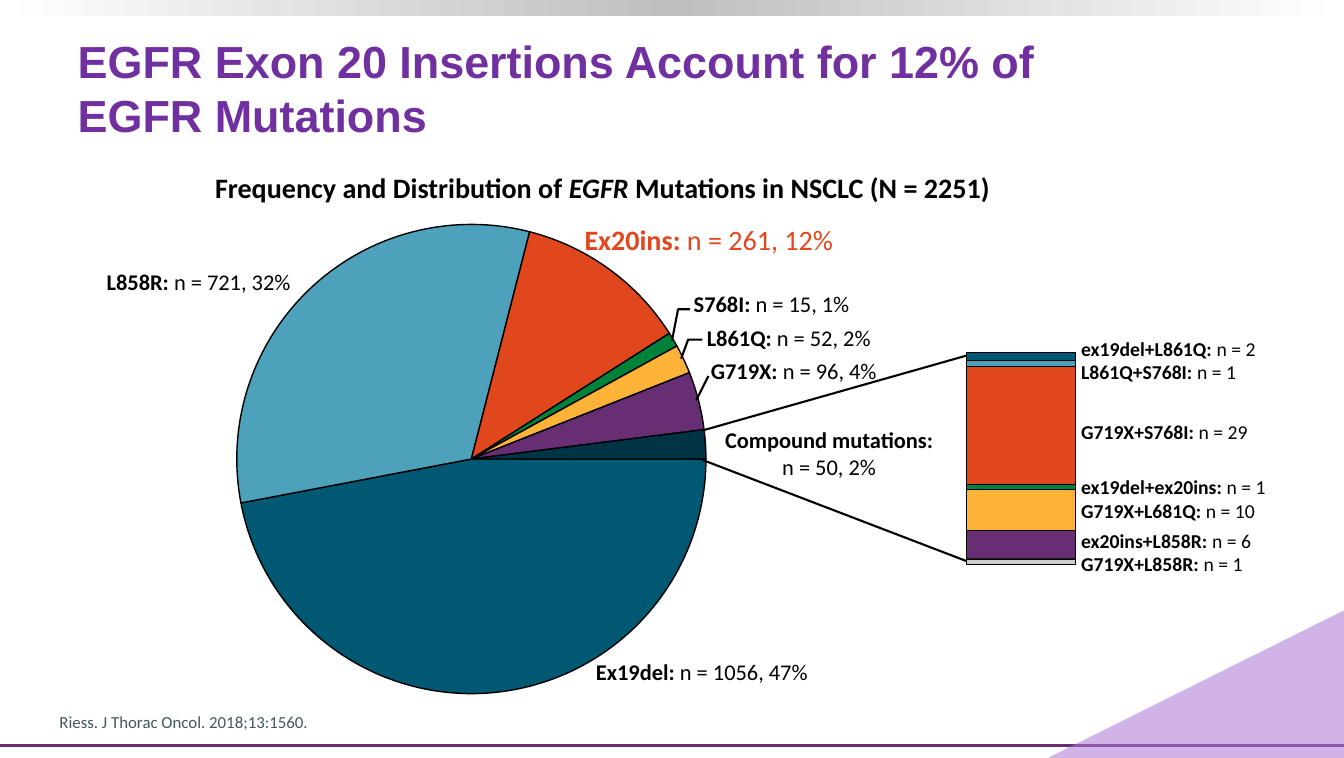
import copy
import pptx
import pptx.chart.data
import pptx.dml.color
import pptx.enum.chart
import pptx.enum.shapes
import pptx.enum.text
import pptx.oxml
import pptx.util
from pptx.util import Inches

BLACK, PURPLE, ORANGE = "000000", "682E74", "E1471D"
LEFT, CENTER = pptx.enum.text.PP_ALIGN.LEFT, pptx.enum.text.PP_ALIGN.CENTER
NS = 'xmlns:c="http://schemas.openxmlformats.org/drawingml/2006/chart"'
A_NS = 'xmlns:a="http://schemas.openxmlformats.org/drawingml/2006/main"'


def rgb(value):
    return pptx.dml.color.RGBColor.from_string(value)


def add_label(left, top, width, height, size, lines, color=BLACK, align=LEFT, font="Calibri"):
    """Each line is a list of (text, bold, italic) runs."""
    frame = slide.shapes.add_textbox(
        Inches(left), Inches(top), Inches(width), Inches(height)).text_frame
    frame.word_wrap = True
    frame.vertical_anchor = pptx.enum.text.MSO_ANCHOR.MIDDLE
    for number, runs in enumerate(lines):
        paragraph = frame.add_paragraph() if number else frame.paragraphs[0]
        paragraph.alignment = align
        paragraph.font.size = pptx.util.Pt(size)
        paragraph.font.name = font
        paragraph.font.color.rgb = rgb(color)
        for text, bold, italic in runs:
            run = paragraph.add_run()
            run.text = text
            run.font.bold = bold
            run.font.italic = italic


deck = pptx.Presentation()
deck.slide_width, deck.slide_height = Inches(13.3), Inches(7.5)
slide = deck.slides.add_slide(deck.slide_layouts[6])

# Top band fading to white at both ends
band = slide.shapes.add_shape(
    pptx.enum.shapes.MSO_SHAPE.RECTANGLE, 0, 0, Inches(13.3), Inches(0.16))
band.shadow.inherit = False
band.line.fill.background()
band.fill.gradient()
band.fill.gradient_angle = 0
first_stop = band.fill.gradient_stops[0]
first_stop.color.rgb = rgb("FFFFFF")
first_stop._gs.addnext(copy.deepcopy(first_stop._gs))
for stop, (position, color) in zip(
        band.fill.gradient_stops, [(0, "FFFFFF"), (0.5, "BFBFBF"), (1, "FFFFFF")]):
    stop.position = position
    stop.color.rgb = rgb(color)

# Pie of mutation frequencies, in percent
slices = [("Ex19del", 47, "015873"), ("L858R", 32, "4DA1BB"), ("Ex20ins", 12, ORANGE),
          ("S768I", 1, "00823B"), ("L861Q", 2, "FDB338"), ("G719X", 4, PURPLE),
          ("Compound mutations", 2, "013545")]
frequencies = pptx.chart.data.CategoryChartData()
frequencies.categories = [name for name, _, _ in slices]
frequencies.add_series("Frequency", [percent for _, percent, _ in slices])
pie = slide.shapes.add_chart(
    pptx.enum.chart.XL_CHART_TYPE.PIE, Inches(0.98), Inches(2.08),
    Inches(7.37), Inches(4.93), frequencies).chart
pie.has_legend = False
pie.has_title = False
pie.font.name = "Arial"
pie.font.size = pptx.util.Pt(10)
pie_plot = pie.plots[0]
pie_plot.vary_by_categories = True
for index, (_, _, color) in enumerate(slices):
    wedge = pie_plot.series[0].points[index].format
    wedge.fill.solid()
    wedge.fill.fore_color.rgb = rgb(color)
    wedge.line.color.rgb = rgb(BLACK)
    wedge.line.width = pptx.util.Pt(1)
for old_angle in pie_plot._element.findall(pptx.oxml.ns.qn("c:firstSliceAng")):
    pie_plot._element.remove(old_angle)
pie_plot._element.append(pptx.oxml.parse_xml(f'<c:firstSliceAng {NS} val="90"/>'))
plot_area = pie_plot._element.getparent()
for old_layout in plot_area.findall(pptx.oxml.ns.qn("c:layout")):
    plot_area.remove(old_layout)
plot_area.insert(0, pptx.oxml.parse_xml(
    f'<c:layout {NS}><c:manualLayout><c:layoutTarget val="inner"/>'
    '<c:xMode val="edge"/><c:yMode val="edge"/><c:x val="0.185"/><c:y val="0.028"/>'
    '<c:w val="0.63"/><c:h val="0.943"/></c:manualLayout></c:layout>'))

# Title, heading and citation
add_label(0.67, 0.26, 12.15, 1.21, 32,
          [[("EGFR Exon 20 Insertions Account for 12% of", True, False)],
           [("EGFR Mutations", True, False)]], color="7030A0", font="Arial")
add_label(2.03, 1.63, 8.1, 0.44, 20,
          [[("Frequency and Distribution of ", True, False), ("EGFR ", True, True),
            ("Mutations in NSCLC (N = 2251)", True, False)]])
add_label(0.49, 6.99, 8.74, 0.3, 12,
          [[("Riess. J Thorac Oncol. 2018;13:1560.", False, False)]], color="455560")

# Pie labels
for left, top, width, height, size, color, name, count in [
        (5.61, 2.15, 2.81, 0.44, 20, ORANGE, "Ex20ins: ", "n = 261, 12%"),
        (0.91, 2.6, 2.11, 0.37, 16, BLACK, "L858R: ", "n = 721, 32%"),
        (6.58, 2.82, 2.11, 0.37, 16, BLACK, "S768I: ", "n = 15, 1%"),
        (6.81, 3.15, 1.99, 0.37, 16, BLACK, "L861Q: ", "n = 52, 2%"),
        (6.88, 3.48, 1.95, 0.37, 16, BLACK, "G719X: ", "n = 96, 4%"),
        (5.75, 6.46, 2.39, 0.37, 16, BLACK, "Ex19del: ", "n = 1056, 47%")]:
    add_label(left, top, width, height, size,
              [[(name, True, False), (count, False, False)]], color, CENTER)
add_label(7.01, 4.16, 2.39, 0.64, 16,
          [[("Compound mutations:", True, False)], [("n = 50, 2%", False, False)]],
          align=CENTER)

# Stacked bar of compound mutations: each part reaches down to the next top
bar_parts = [(3.49, "015873"), (3.57, "4DA1BB"), (3.63, ORANGE), (4.79, "00823B"),
             (4.84, "FDB338"), (5.25, PURPLE), (5.53, "CDCDCF")]
bottoms = [top for top, _ in bar_parts[1:]] + [5.58]
for (top, color), bottom in zip(bar_parts, bottoms):
    part = slide.shapes.add_shape(
        pptx.enum.shapes.MSO_SHAPE.RECTANGLE, Inches(9.56), Inches(top),
        Inches(1.08), Inches(bottom - top))
    part.shadow.inherit = False
    part.fill.solid()
    part.fill.fore_color.rgb = rgb(color)
    part.line.color.rgb = rgb(BLACK)
    part.line.width = pptx.util.Pt(0.5)

# Bar labels
for top, height, rows in [
        (3.28, 0.57, [("ex19del+L861Q: ", "n = 2"), ("L861Q+S768I: ", "n = 1")]),
        (4.1, 0.34, [("G719X+S768I: ", "n = 29")]),
        (4.65, 0.57, [("ex19del+ex20ins: ", "n = 1"), ("G719X+L681Q: ", "n = 10")]),
        (5.18, 0.57, [("ex20ins+L858R: ", "n = 6"), ("G719X+L858R: ", "n = 1")])]:
    add_label(10.6, top, 2.16, height, 14,
              [[(name, True, False), (count, False, False)] for name, count in rows])

# Straight lines: pie to bar, G719X leader, footer rule
for x1, y1, x2, y2, color in [(6.95, 4.26, 9.56, 3.52, BLACK), (6.95, 4.55, 9.56, 5.55, BLACK),
                              (6.89, 3.96, 7.01, 3.72, BLACK), (0, 7.38, 13.3, 7.38, PURPLE)]:
    rule = slide.shapes.add_connector(
        pptx.enum.shapes.MSO_CONNECTOR.STRAIGHT,
        Inches(x1), Inches(y1), Inches(x2), Inches(y2))
    rule.line.color.rgb = rgb(color)
    rule.line.width = pptx.util.Pt(2.25 if color == PURPLE else 1.5)
    rule._element.spPr.append(pptx.oxml.parse_xml(f"<a:effectLst {A_NS}/>"))

# Bent leaders for S768I and L861Q
for start, *bends in [[(6.65, 3.37), (6.71, 3.06), (6.83, 3.06)],
                      [(6.74, 3.55), (6.81, 3.36), (6.95, 3.36)]]:
    outline = slide.shapes.build_freeform(Inches(start[0]), Inches(start[1]))
    outline.add_line_segments([(Inches(x), Inches(y)) for x, y in bends], close=False)
    leader = outline.convert_to_shape()
    leader.shadow.inherit = False
    leader.fill.background()
    leader.line.color.rgb = rgb(BLACK)
    leader.line.width = pptx.util.Pt(1.5)

# Translucent corner triangle
outline = slide.shapes.build_freeform(Inches(10.37), Inches(7.5))
outline.add_line_segments([(Inches(13.3), Inches(7.5)), (Inches(13.3), Inches(6.04))])
corner = outline.convert_to_shape()
corner.shadow.inherit = False
corner.line.fill.background()
corner.fill.solid()
corner.fill.fore_color.rgb = rgb("AC75D5")
corner._element.spPr.find(".//" + pptx.oxml.ns.qn("a:srgbClr")).append(
    pptx.oxml.parse_xml(f'<a:alpha {A_NS} val="55000"/>'))

deck.save("out.pptx")
